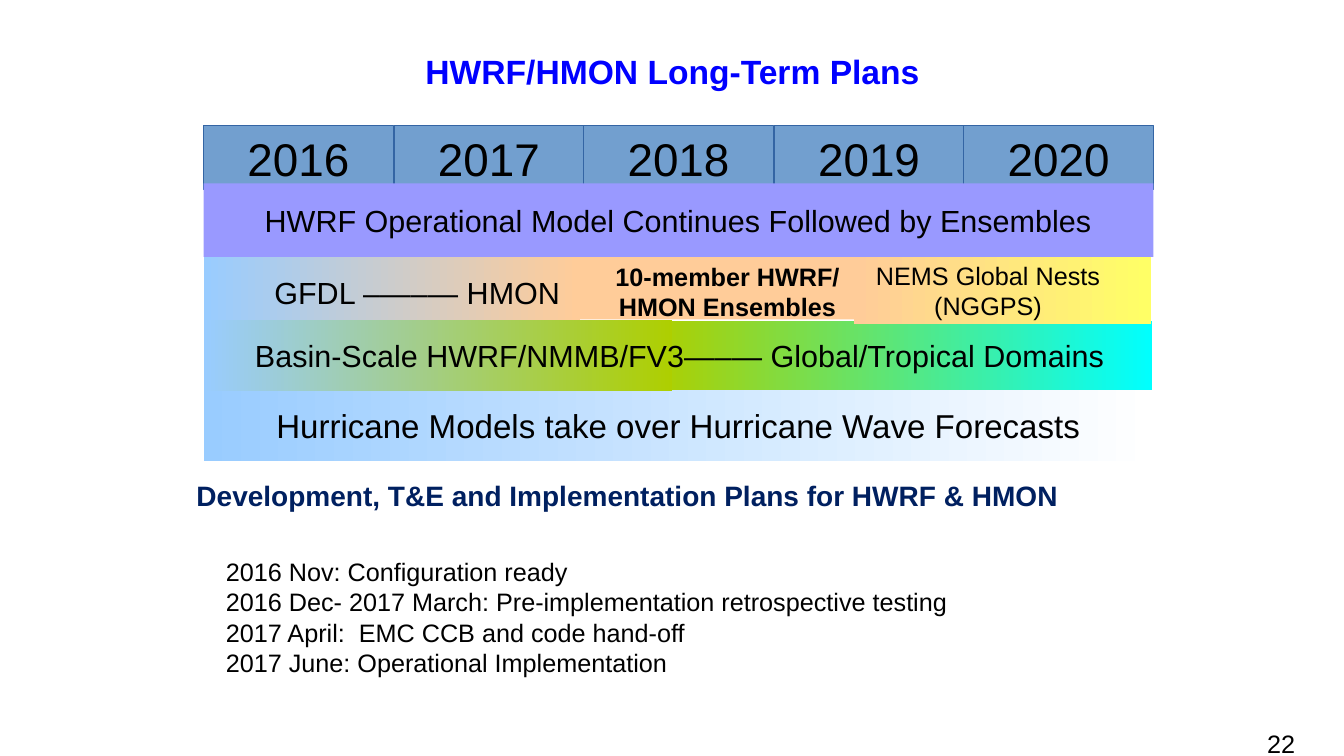
"""Build the HWRF/HMON long-term plans slide."""
from pptx import Presentation
from pptx.dml.color import RGBColor as Rgb
from pptx.enum.shapes import MSO_SHAPE as Kind
from pptx.enum.text import MSO_ANCHOR as Anchor, MSO_AUTO_SIZE as Fit, PP_ALIGN as Align
from pptx.util import Emu, Pt

INKS = {
    "black": "000000", "title": "0000FF", "navy": "002060",
    "steel": "729FCF", "edge": "3465A4", "violet": "9999FF",
    "sky": "99CCFF", "peach": "FFCC99", "lemon": "FFFF66",
    "lime": "AECF00", "aqua": "00FFFF", "white": "FFFFFF",
}
TIGHT = (9, 4, 9, 4)
LOOSE = (10, 5, 10, 5)


class Deck:
    """Hold the style and the current slide."""

    scale = 9144
    face = "Arial"

    def __init__(self, wide, high):
        self.show = Presentation()
        self.show.slide_width = self.px(wide)
        self.show.slide_height = self.px(high)
        self.slide = self.show.slides.add_slide(self.show.slide_layouts[6])

    def px(self, count):
        return Emu(count * self.scale)

    def ink(self, name):
        return Rgb.from_string(INKS[name])

    def label(self, shape, text, size, ink="black", bold=False, align=Align.CENTER,
              pad=TIGHT, mid=False, wrap=True, grow=False):
        frame = shape.text_frame
        frame.text = text
        frame.word_wrap = wrap
        frame.auto_size = Fit.SHAPE_TO_FIT_TEXT if grow else Fit.NONE
        frame.vertical_anchor = Anchor.MIDDLE if mid else Anchor.TOP
        (frame.margin_left, frame.margin_top,
         frame.margin_right, frame.margin_bottom) = map(self.px, pad)
        for line in frame.paragraphs:
            line.alignment = align
            for run in line.runs:
                run.font.name = self.face
                run.font.size = Pt(size)
                run.font.bold = bold
                run.font.color.rgb = self.ink(ink)

    def text(self, area, words, size, **style):
        box = self.slide.shapes.add_textbox(*map(self.px, area))
        self.label(box, words, size, **style)

    def bar(self, area, inks, words="", size=0, edge=None):
        bar = self.slide.shapes.add_shape(Kind.RECTANGLE, *map(self.px, area))
        bar.shadow.inherit = False
        if len(inks) == 1:
            bar.fill.solid()
            bar.fill.fore_color.rgb = self.ink(inks[0])
        else:
            bar.fill.gradient()
            bar.fill.gradient_angle = 0
            for stop, name in zip(bar.fill.gradient_stops, inks):
                stop.color.rgb = self.ink(name)
        if edge:
            bar.line.color.rgb = self.ink(edge)
            bar.line.width = Pt(0.75)
        else:
            bar.line.fill.background()
        if words:
            self.label(bar, words, size, mid=True, wrap=False)


def main():
    deck = Deck(1333, 750)
    deck.text((1247, 718, 53, 40), "22", 18, align=Align.LEFT, pad=LOOSE, grow=True)
    deck.text((217, 30, 900, 81), "HWRF/HMON Long-Term Plans", 24,
              ink="title", bold=True, pad=(0, 0, 0, 0), mid=True)

    deck.bar((651, 318, 492, 72), ["lime", "aqua"])
    for step in range(5):
        left = 202 + (step * 377 + 1) // 2
        deck.bar((left, 125, 188, 63), ["steel"], str(2016 + step), 32.7, "edge")

    deck.bar((202, 253, 373, 66), ["sky", "peach"])
    deck.bar((574, 254, 335, 63), ["peach"])
    deck.bar((847, 254, 295, 67), ["peach", "lemon"])
    deck.text((823, 257, 314, 63), "NEMS Global Nests (NGGPS)", 18, mid=True)
    deck.text((222, 268, 384, 43), "GFDL –—–— HMON", 21.8)
    deck.bar((202, 387, 942, 70), ["sky", "white"],
             "Hurricane Models take over Hurricane Wave Forecasts", 23.6)
    deck.bar((202, 317, 465, 71), ["sky", "lime"])
    deck.text((219, 330, 911, 43),
              "Basin-Scale HWRF/NMMB/FV3—–— Global/Tropical Domains", 21.8)

    dates = [
        "2016 Nov: Configuration ready",
        "2016 Dec- 2017 March: Pre-implementation retrospective testing",
        "2017 April:  EMC CCB and code hand-off",
        "2017 June: Operational Implementation",
    ]
    deck.text((171, 547, 977, 131), "\n".join(dates), 18,
              align=Align.LEFT, pad=(53, 5, 10, 5), grow=True)
    deck.text((185, 470, 958, 44),
              "Development, T&E and Implementation Plans for HWRF & HMON", 20,
              ink="navy", bold=True, align=Align.LEFT, pad=LOOSE, grow=True)
    deck.text((579, 254, 285, 71), "10-member HWRF/ HMON Ensembles", 18,
              bold=True, pad=LOOSE, grow=True)
    deck.bar((202, 182, 942, 73), ["violet"],
             "HWRF Operational Model Continues Followed by Ensembles", 21.8)
    deck.show.save("out.pptx")


if __name__ == "__main__":
    main()
